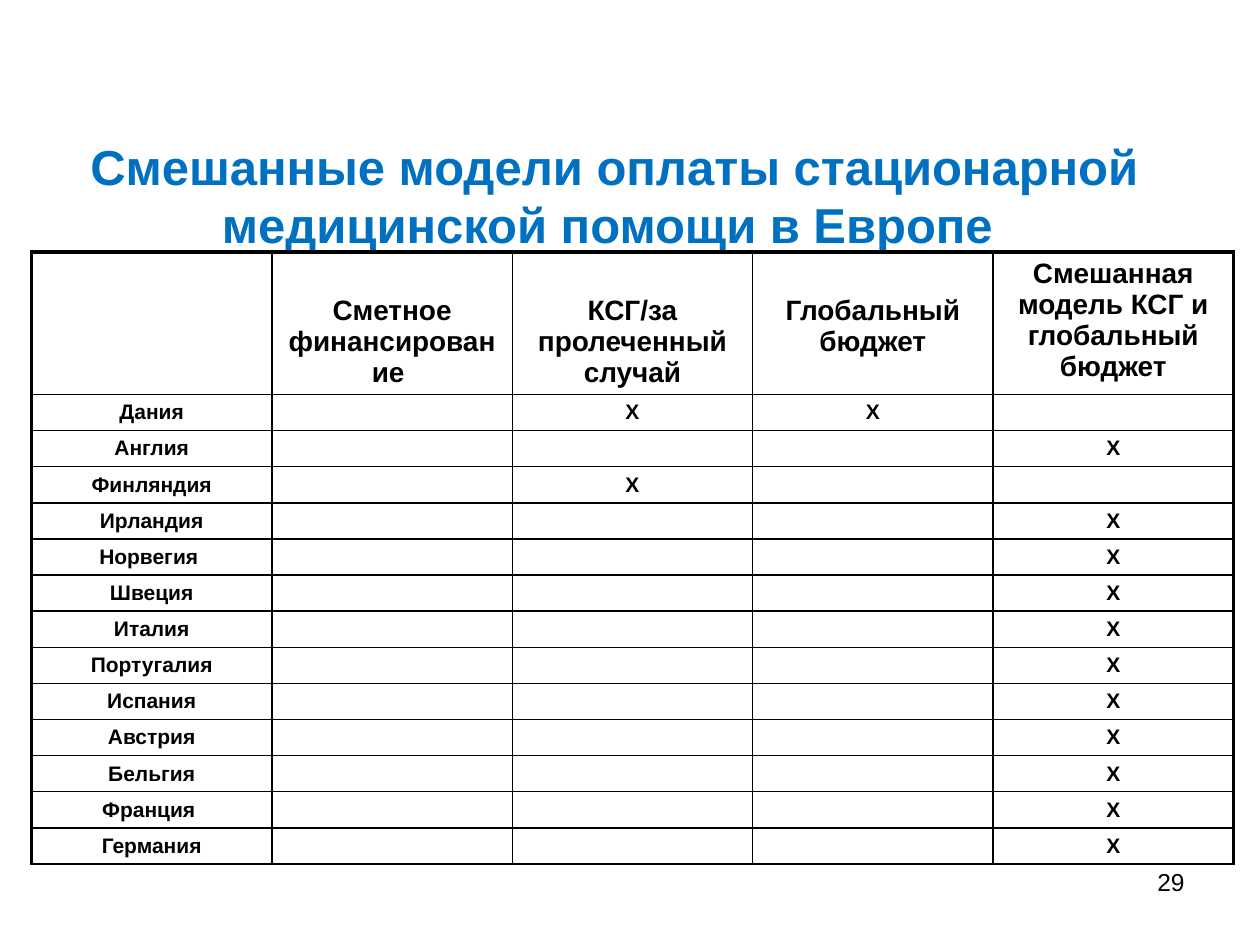
"""Build a slide with a table of hospital payment models in Europe."""
from lxml.etree import SubElement
from pptx import Presentation
from pptx.dml.color import RGBColor
from pptx.enum.text import MSO_ANCHOR, PP_ALIGN
from pptx.oxml.ns import qn
from pptx.util import Inches, Pt

COLORS = {"title": "0070C0", "ink": "000000"}
FONT = "Arial"
TITLE = "Смешанные модели оплаты стационарной медицинской помощи в Европе "
PAGE_NUMBER = "29"
HEADERS = [
    "",
    "Сметное финансирование ",
    "КСГ/за пролеченный случай",
    "Глобальный бюджет",
    "Смешанная модель КСГ и глобальный бюджет",
]
CASE, BUDGET, MIXED = 2, 3, 4
COUNTRIES = [
    ("Дания", (CASE, BUDGET)),
    ("Англия", (MIXED,)),
    ("Финляндия", (CASE,)),
    ("Ирландия", (MIXED,)),
    ("Норвегия ", (MIXED,)),
    ("Швеция", (MIXED,)),
    ("Италия", (MIXED,)),
    ("Португалия", (MIXED,)),
    ("Испания", (MIXED,)),
    ("Австрия", (MIXED,)),
    ("Бельгия", (MIXED,)),
    ("Франция ", (MIXED,)),
    ("Германия", (MIXED,)),
]
TABLE_LEFT, TABLE_TOP, TABLE_WIDTH = 0.25, 2, 9.54
HEADER_HEIGHT, TABLE_HEIGHT = 1.13, 4.86
LOWERED_HEADER_MARGIN = 0.34
THICK, THIN = 2.25, 1


def write(frame, text, size, color="ink", bold=True, align=PP_ALIGN.CENTER):
    """Put one formatted paragraph into a text frame."""
    para = frame.paragraphs[0]
    para.text = text
    para.alignment = align
    para.font.name = FONT
    para.font.size = Pt(size)
    para.font.bold = bold
    para.font.color.rgb = RGBColor.from_string(COLORS[color])


def set_borders(cell, widths):
    """Draw solid borders, with widths given by side."""
    properties = cell._tc.get_or_add_tcPr()
    for side in ("L", "R", "T", "B"):
        line = SubElement(properties, qn(f"a:ln{side}"), w=str(Pt(widths[side])))
        fill = SubElement(line, qn("a:solidFill"))
        SubElement(fill, qn("a:srgbClr"), val=COLORS["ink"])


def add_title(page):
    """Format the title placeholder."""
    title = page.shapes.title
    title.left, title.top = Inches(0), Inches(0.64)
    title.width, title.height = Inches(9.75), Inches(1.3)
    frame = title.text_frame
    frame.word_wrap = True
    frame.vertical_anchor = MSO_ANCHOR.TOP
    frame.margin_top, frame.margin_bottom = Inches(0.44), 0
    write(frame, TITLE, 28, "title")


def add_models(page):
    """Add the table of countries and payment models."""
    rows = [HEADERS] + [
        [country] + ["X" if column in models else "" for column in range(1, len(HEADERS))]
        for country, models in COUNTRIES
    ]
    last = len(HEADERS) - 1
    table = page.shapes.add_table(
        len(rows), len(HEADERS), Inches(TABLE_LEFT), Inches(TABLE_TOP),
        Inches(TABLE_WIDTH), Inches(TABLE_HEIGHT),
    ).table
    table.first_row = table.horz_banding = False
    body_height = (TABLE_HEIGHT - HEADER_HEIGHT) / len(COUNTRIES)
    for r, texts in enumerate(rows):
        table.rows[r].height = Inches(body_height if r else HEADER_HEIGHT)
        for c, text in enumerate(texts):
            cell = table.cell(r, c)
            set_borders(cell, {
                "L": THIN if c else THICK,
                "R": THICK if c == last else THIN,
                "T": THIN if r else THICK,
                "B": THIN,
            })
            cell.fill.background()
            if r:
                cell.vertical_anchor = MSO_ANCHOR.MIDDLE
                cell.margin_top = cell.margin_bottom = 0
            elif 0 < c < last:
                cell.margin_top = Inches(LOWERED_HEADER_MARGIN)
            write(cell.text_frame, text, 12 if r else 16)


def add_page_number(page):
    """Add the page number at the lower right."""
    box = page.shapes.add_textbox(Inches(7.17), Inches(6.83), Inches(2.33), Inches(0.52))
    box.text_frame.word_wrap = True
    write(box.text_frame, PAGE_NUMBER, 14, bold=False, align=PP_ALIGN.RIGHT)


def main():
    """Build and save the deck."""
    deck = Presentation()
    deck.slide_width, deck.slide_height = Inches(10), Inches(7.5)
    page = deck.slides.add_slide(deck.slide_layouts[5])
    add_title(page)
    add_models(page)
    add_page_number(page)
    deck.save("out.pptx")


if __name__ == "__main__":
    main()
